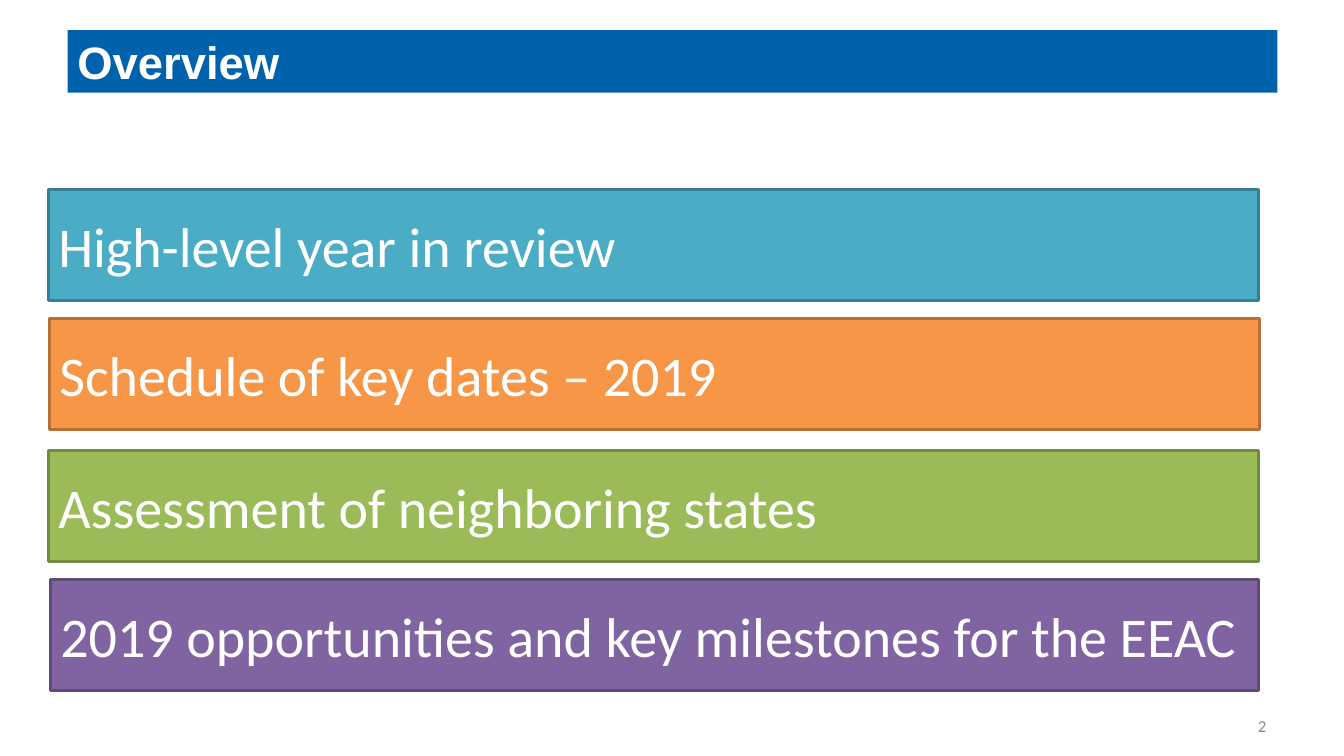
from pptx import Presentation
from pptx.dml.color import RGBColor
from pptx.enum.shapes import MSO_SHAPE
from pptx.enum.text import MSO_ANCHOR, PP_ALIGN
from pptx.util import Inches, Pt

RECTANGLE = MSO_SHAPE.RECTANGLE
MIDDLE = MSO_ANCHOR.MIDDLE
LEFT, RIGHT = PP_ALIGN.LEFT, PP_ALIGN.RIGHT


def color(hex_value):
    return RGBColor.from_string(hex_value)


def write(shape, text, size, font_name, hex_value, align=LEFT, bold=False):
    frame = shape.text_frame
    frame.word_wrap = True
    frame.vertical_anchor = MIDDLE
    frame.text = text
    paragraph = frame.paragraphs[0]
    paragraph.alignment = align
    font = paragraph.runs[0].font
    font.size = Pt(size)
    font.name = font_name
    font.bold = bold
    font.color.rgb = color(hex_value)


prs = Presentation()
prs.slide_width = Inches(13.33)
prs.slide_height = Inches(7.5)
slide = prs.slides.add_slide(prs.slide_layouts[6])

heading = slide.shapes.add_shape(
    RECTANGLE, Inches(0.67), Inches(0.3), Inches(12), Inches(0.62))
heading.shadow.inherit = False
heading.fill.solid()
heading.fill.fore_color.rgb = color("0062AC")
heading.line.fill.background()
write(heading, "Overview", 32.4, "Arial", "FFFFFF", bold=True)

page_number = slide.shapes.add_textbox(
    Inches(11.6), Inches(7), Inches(1.06), Inches(0.4))
write(page_number, "2", 12, "Calibri", "8C8C8C", align=RIGHT)

topics = [
    ("High-level year in review", 0.48, 1.88, 12, "4BACC6", "377F92"),
    ("Schedule of key dates – 2019", 0.49, 3.16, 12, "F79646", "B76F34"),
    ("Assessment of neighboring states", 0.48, 4.47, 12, "9BBB59", "738A42"),
    ("2019 opportunities and key milestones for the EEAC",
     0.5, 5.75, 11.98, "8064A2", "5F4A78"),
]
for topic, left, top, width, fill, outline in topics:
    bar = slide.shapes.add_shape(
        RECTANGLE, Inches(left), Inches(top), Inches(width), Inches(1.1))
    bar.shadow.inherit = False
    bar.fill.solid()
    bar.fill.fore_color.rgb = color(fill)
    bar.line.color.rgb = color(outline)
    bar.line.width = Pt(2)
    write(bar, topic, 40, "Calibri", "FFFFFF")

prs.save("out.pptx")
